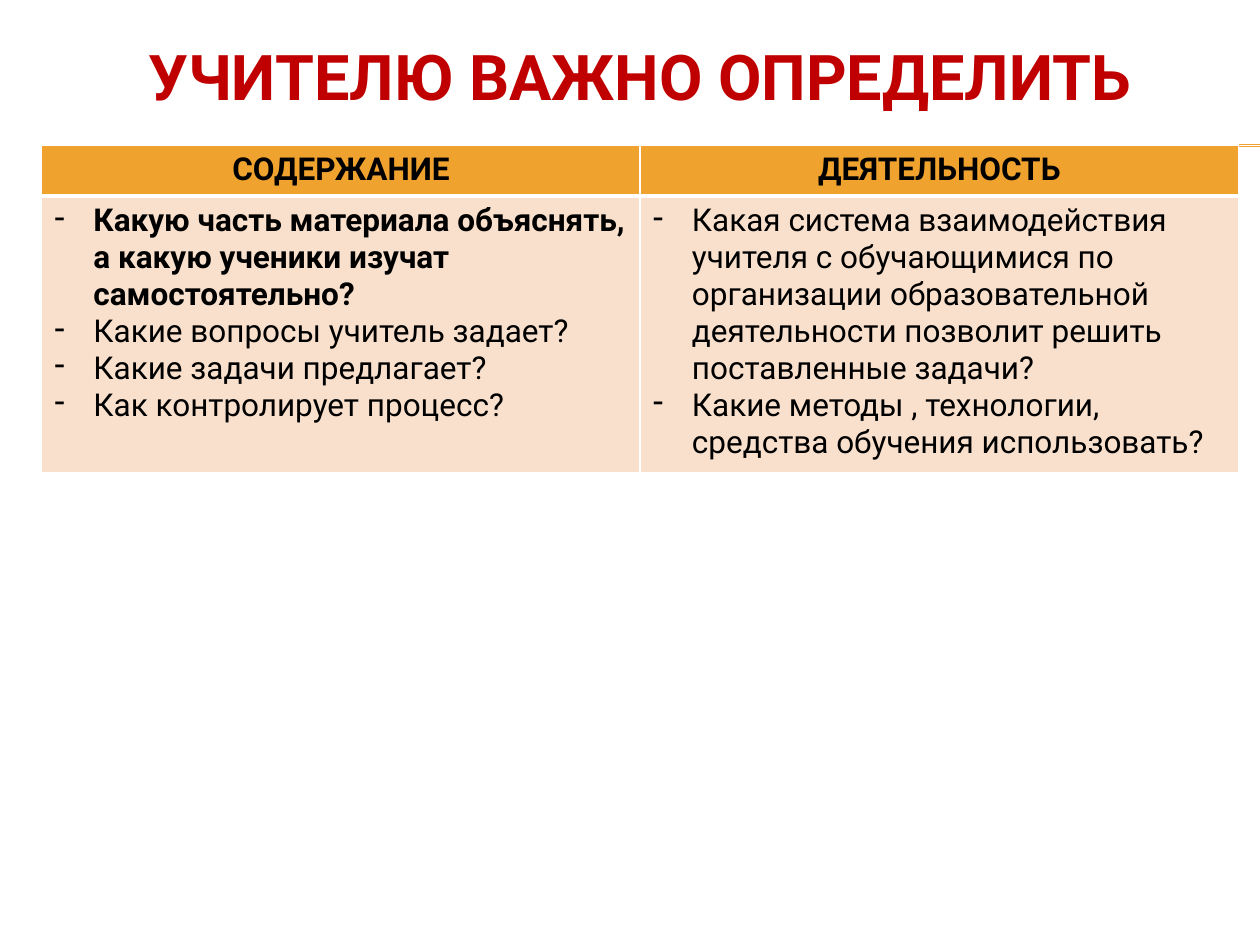
"""Build a slide with a title and a two-column table for lesson planning."""
from dataclasses import dataclass

from lxml import etree
from pptx import Presentation
from pptx.dml.color import RGBColor
from pptx.enum.shapes import MSO_CONNECTOR
from pptx.enum.text import MSO_ANCHOR, PP_ALIGN
from pptx.oxml.ns import qn
from pptx.util import Cm, Pt

STRAIGHT = MSO_CONNECTOR.STRAIGHT
MIDDLE = MSO_ANCHOR.MIDDLE
CENTER = PP_ALIGN.CENTER
LEFT = PP_ALIGN.LEFT
COLORS = {
    "title": "C00000",
    "text": "000000",
    "accent": "F0A22E",
    "body": "F9E0CD",
    "border": "FFFFFF",
}
TITLE_FORMAT = {"name": "Roboto", "size": Pt(36), "bold": True}
HEADER_FORMAT = {"name": "Roboto", "size": Pt(18), "bold": True}
BODY_FORMAT = {**HEADER_FORMAT, "bold": False}
LEFT_EDGE, CONTENT_WIDTH = Cm(0.84), Cm(24.13)
RULE_TOPS = (Cm(2.92), Cm(2.95))
ROW_HEIGHTS = (Cm(1.03), Cm(5.47))
THIN, THICK = Pt(1), Pt(3)


@dataclass
class Column:
    """A heading with its questions, the first of which may be bold."""

    heading: str
    questions: tuple[str, ...]
    bold_first: bool = False


COLUMNS = (
    Column(
        "СОДЕРЖАНИЕ",
        (
            "Какую часть материала объяснять, а какую ученики изучат самостоятельно?",
            "Какие вопросы учитель задает?",
            "Какие задачи предлагает?",
            "Как контролирует процесс?",
        ),
        bold_first=True,
    ),
    Column(
        "ДЕЯТЕЛЬНОСТЬ",
        (
            "Какая система взаимодействия учителя с обучающимися по организации "
            "образовательной деятельности позволит решить поставленные задачи?",
            "Какие методы , технологии, средства обучения использовать?",
        ),
    ),
)


def write(para, text: str, font_format: dict, color: str, alignment) -> None:
    """Put one formatted span into a paragraph."""
    para.alignment = alignment
    span = para.add_run()
    span.text = text
    for attribute, value in font_format.items():
        setattr(span.font, attribute, value)
    span.font.color.rgb = RGBColor.from_string(COLORS[color])


def add_dash(para) -> None:
    """Give a paragraph a hanging dash bullet."""
    properties = para._p.get_or_add_pPr()
    properties.set("marL", str(Cm(0.79)))
    properties.set("indent", str(-Cm(0.79)))
    etree.SubElement(properties, qn("a:buChar"), char="-")


def style_cell(cell, fill: str, top: int, bottom: int) -> None:
    """Set the borders and then the fill of a cell."""
    properties = cell._tc.get_or_add_tcPr()
    widths = {"lnL": THIN, "lnR": THIN, "lnT": top, "lnB": bottom}
    for side, width in widths.items():
        line = etree.SubElement(properties, qn(f"a:{side}"), w=str(width))
        solid = etree.SubElement(line, qn("a:solidFill"))
        etree.SubElement(solid, qn("a:srgbClr"), val=COLORS["border"])
    cell.fill.solid()
    cell.fill.fore_color.rgb = RGBColor.from_string(COLORS[fill])


def add_rule(page, top: int, right: int) -> None:
    """Draw a thin accent line to the right edge of the page."""
    rule = page.shapes.add_connector(STRAIGHT, Cm(1.42), top, right, top)
    rule.line.color.rgb = RGBColor.from_string(COLORS["accent"])
    rule.line.width = Pt(0.75)
    etree.SubElement(rule._element.spPr, qn("a:effectLst"))


def add_title(page, text: str) -> None:
    """Add the centred title."""
    box = page.shapes.add_textbox(LEFT_EDGE, Cm(0.33), CONTENT_WIDTH, Cm(2.39))
    box.text_frame.word_wrap = True
    box.text_frame.vertical_anchor = MIDDLE
    write(box.text_frame.paragraphs[0], text, TITLE_FORMAT, "title", CENTER)


def add_questions(page, columns: tuple[Column, ...]) -> None:
    """Add the table of headings and questions."""
    table = page.shapes.add_table(
        len(ROW_HEIGHTS), len(columns), LEFT_EDGE, RULE_TOPS[0],
        CONTENT_WIDTH, sum(ROW_HEIGHTS),
    ).table
    for row, height in zip(table.rows, ROW_HEIGHTS):
        row.height = height
    for index, column in enumerate(columns):
        header, body = table.cell(0, index), table.cell(1, index)
        style_cell(header, "accent", THIN, THICK)
        style_cell(body, "body", THICK, THIN)
        write(header.text_frame.paragraphs[0], column.heading,
              HEADER_FORMAT, "text", CENTER)
        frame = body.text_frame
        for number, question in enumerate(column.questions):
            para = frame.add_paragraph() if number else frame.paragraphs[0]
            bold = column.bold_first and number == 0
            write(para, question, HEADER_FORMAT if bold else BODY_FORMAT,
                  "text", LEFT)
            add_dash(para)


def main() -> None:
    """Build and save the deck."""
    deck = Presentation()
    deck.slide_width, deck.slide_height = Cm(25.4), Cm(19.05)
    page = deck.slides.add_slide(deck.slide_layouts[6])
    for top in RULE_TOPS:
        add_rule(page, top, deck.slide_width)
    add_title(page, "УЧИТЕЛЮ ВАЖНО ОПРЕДЕЛИТЬ")
    add_questions(page, COLUMNS)
    deck.save("out.pptx")


if __name__ == "__main__":
    main()
